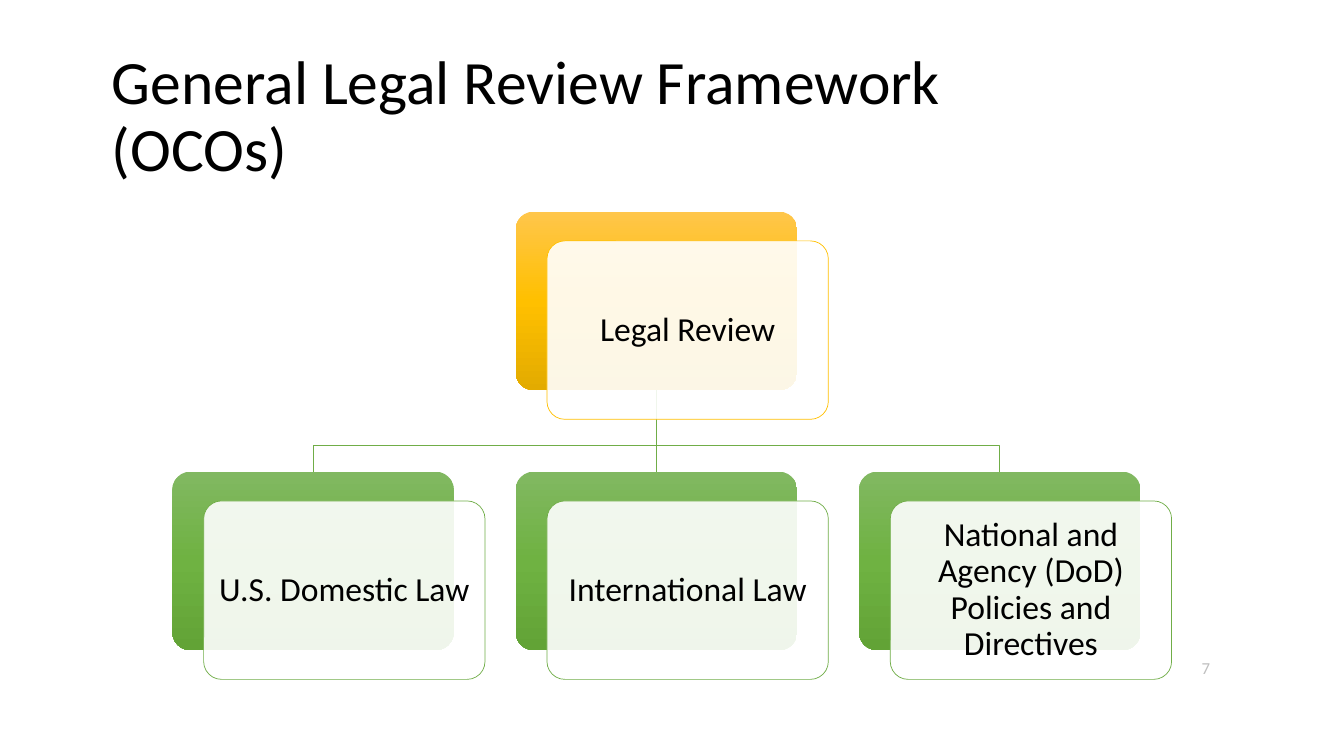
"""Builds the legal review framework slide: one root card over three branches."""
import copy
import pptx
import pptx.util
import pptx.dml.color
import pptx.enum.shapes
import pptx.enum.text
import pptx.oxml.ns
import lxml.etree

Inch = pptx.util.Inches
Pt = pptx.util.Pt
qn = pptx.oxml.ns.qn
ALIGN = pptx.enum.text.PP_ALIGN
MIDDLE = pptx.enum.text.MSO_ANCHOR.MIDDLE
ROUND = pptx.enum.shapes.MSO_SHAPE.ROUNDED_RECTANGLE
STRAIGHT = pptx.enum.shapes.MSO_CONNECTOR.STRAIGHT

GOLD, GREEN = "FFC000", "70AD47"
GOLDS = ["FFC64B", "FFC000", "E3AB00"]
GREENS = ["81B861", "6FB242", "62A336"]
LEFT, STEP = 1.71, 3.405
TOP, ROW = 2.1, 2.58
WIDE, HIGH = 2.79, 1.77
DX, DY = 0.31, 0.29
BUS = 4.42


def tint(text):
    return pptx.dml.color.RGBColor.from_string(text)


def write(para, text, size, color):
    run = para.add_run()
    run.text = text
    run.font.size = Pt(size)
    run.font.name = "Calibri"
    run.font.color.rgb = tint(color)


deck = pptx.Presentation()
deck.slide_width, deck.slide_height = Inch(13.33), Inch(7.5)
slide = deck.slides.add_slide(deck.slide_layouts[5])
shapes = slide.shapes

title = shapes.title
title.left, title.top = Inch(1.01), Inch(0.13)
title.width, title.height = Inch(10.83), Inch(2.08)
title.text_frame.vertical_anchor = MIDDLE
head = title.text_frame.paragraphs[0]
head.alignment = ALIGN.LEFT
head.line_spacing = 0.9
write(head, "General Legal Review Framework", 44, "000000")
head.add_line_break()
write(head, "(OCOs)", 44, "000000")

page = shapes.add_textbox(Inch(11.5), Inch(6.43), Inch(0.6), Inch(0.4))
page.text_frame.word_wrap = True
page.text_frame.vertical_anchor = MIDDLE
para = page.text_frame.paragraphs[0]
para.alignment = ALIGN.RIGHT
write(para, "7", 12, "BFBFBF")

root = LEFT + STEP + WIDE / 2
start, end = TOP + HIGH, TOP + ROW
for col in (2, 1, 0):
    mid = LEFT + col * STEP + WIDE / 2
    if col == 1:
        link = shapes.add_connector(
            STRAIGHT, Inch(root), Inch(start), Inch(root), Inch(end))
        lxml.etree.SubElement(link._element.spPr, qn("a:effectLst"))
    else:
        pen = shapes.build_freeform(Inch(root), Inch(start))
        bends = [(root, BUS), (mid, BUS), (mid, end)]
        pen.add_line_segments(
            [(Inch(x), Inch(y)) for x, y in bends], close=False)
        link = pen.convert_to_shape()
        link.fill.background()
        link.shadow.inherit = False
    link.line.color.rgb = tint(GREEN)
    link.line.width = Pt(0.5)

cards = [
    (1, 0, "Legal Review", GOLD, GOLDS),
    (0, 1, "U.S. Domestic Law", GREEN, GREENS),
    (1, 1, "International Law", GREEN, GREENS),
    (2, 1, "National and Agency (DoD) Policies and Directives", GREEN, GREENS),
]
for col, row, text, edge, blend in cards:
    x, y = LEFT + col * STEP, TOP + row * ROW
    back = shapes.add_shape(ROUND, Inch(x), Inch(y), Inch(WIDE), Inch(HIGH))
    front = shapes.add_shape(
        ROUND, Inch(x + DX), Inch(y + DY), Inch(WIDE), Inch(HIGH))
    for card in (back, front):
        card.adjustments[0] = 0.1
        card.shadow.inherit = False

    back.line.fill.background()
    back.fill.gradient()
    back.fill.gradient_angle = 270
    stops = back._element.spPr.find(".//" + qn("a:gsLst"))
    stops.append(copy.deepcopy(stops[0]))
    for i, stop in enumerate(back.fill.gradient_stops):
        stop.position = i / 2
        stop.color.rgb = tint(blend[i])

    front.fill.solid()
    front.fill.fore_color.rgb = tint("FFFFFF")
    glass = front._element.spPr.find(".//" + qn("a:srgbClr"))
    lxml.etree.SubElement(glass, qn("a:alpha"), val="90000")
    front.line.color.rgb = tint(edge)
    front.line.width = Pt(0.5)

    frame = front.text_frame
    frame.word_wrap = True
    frame.vertical_anchor = MIDDLE
    frame.margin_left = frame.margin_right = Inch(0.05)
    para = frame.paragraphs[0]
    para.alignment = ALIGN.CENTER
    para.line_spacing = 0.9
    write(para, text, 24, "000000")

deck.save("out.pptx")
